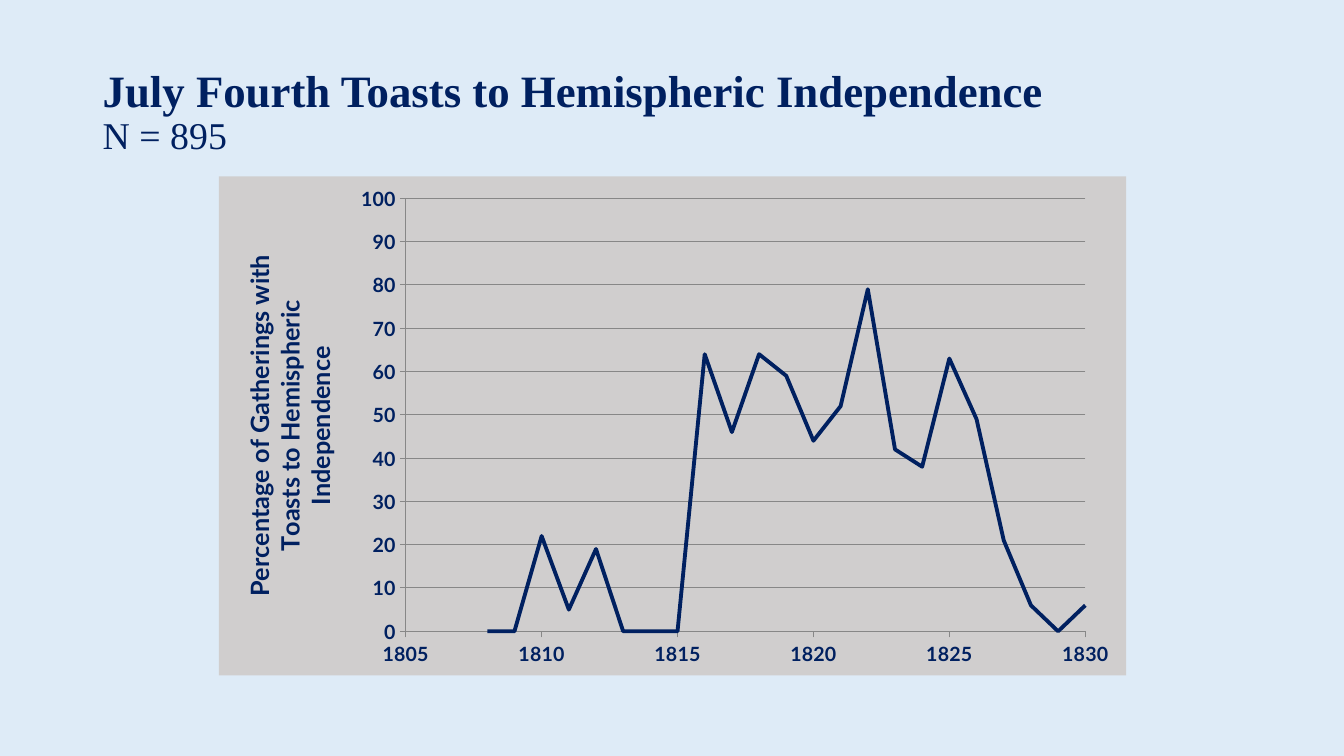
from dataclasses import dataclass

from lxml import etree
from pptx import Presentation
from pptx.chart.data import XyChartData
from pptx.dml.color import RGBColor
from pptx.enum import chart as charts, text
from pptx.oxml import parse_xml
from pptx.oxml.ns import nsdecls
from pptx.util import Inches, Pt


@dataclass(frozen=True)
class Theme:
    background: str = "DEEBF7"
    panel: str = "D0CECE"
    navy: str = "002060"
    grid: str = "878787"
    title_font: str = "Times New Roman"
    chart_font: str = "Lato"
    title_size: int = 32
    sample_size: int = 27
    axis_title_size: int = 18
    tick_size: int = 14
    base_size: int = 10


theme = Theme()


def style_font(font, name, size, bold):
    font.name = name
    font.size = Pt(size)
    font.bold = bold
    font.color.rgb = RGBColor.from_string(theme.navy)


def panel_fill():
    return parse_xml(
        f'<c:spPr {nsdecls("c", "a")}><a:solidFill><a:srgbClr val="{theme.panel}"/>'
        "</a:solidFill><a:ln><a:noFill/></a:ln></c:spPr>"
    )


presentation = Presentation()
presentation.slide_width = Inches(13.33)
presentation.slide_height = Inches(7.5)
slide = presentation.slides.add_slide(presentation.slide_layouts[6])
slide.background.fill.solid()
slide.background.fill.fore_color.rgb = RGBColor.from_string(theme.background)

title_box = slide.shapes.add_textbox(Inches(0.92), Inches(0.4), Inches(11.5), Inches(1.45))
title_frame = title_box.text_frame
title_frame.word_wrap = True
title_frame.vertical_anchor = text.MSO_ANCHOR.MIDDLE
paragraph = title_frame.paragraphs[0]
paragraph.line_spacing = 0.9
heading = paragraph.add_run()
heading.text = "July Fourth Toasts to Hemispheric Independence"
style_font(heading.font, theme.title_font, theme.title_size, True)
paragraph.add_line_break()
sample = paragraph.add_run()
sample.text = "N = 895"
style_font(sample.font, theme.title_font, theme.sample_size, False)

percentages = [0, 0, 22, 5, 19, 0, 0, 0, 64, 46, 64, 59,
               44, 52, 79, 42, 38, 63, 49, 21, 6, 0, 6]
chart_data = XyChartData()
toasts = chart_data.add_series("Series 1")
for year, percentage in enumerate(percentages, start=1808):
    toasts.add_data_point(year, percentage)

chart = slide.shapes.add_chart(
    charts.XL_CHART_TYPE.XY_SCATTER_SMOOTH_NO_MARKERS,
    Inches(2.17), Inches(1.75), Inches(9), Inches(4.95), chart_data,
).chart
chart.has_title = False
chart.has_legend = False
style_font(chart.font, theme.chart_font, theme.base_size, False)
chart.plots[0].vary_by_categories = False

series = chart.plots[0].series[0]
series.smooth = True
series.marker.style = charts.XL_MARKER_STYLE.NONE
series.format.line.color.rgb = RGBColor.from_string(theme.navy)
series.format.line.width = Pt(2.75)

year_axis, percent_axis = chart.category_axis, chart.value_axis
for axis, low, high, step in ((year_axis, 1805, 1830, 5), (percent_axis, 0, 100, 10)):
    axis.minimum_scale, axis.maximum_scale, axis.major_unit = low, high, step
    axis.major_tick_mark = charts.XL_TICK_MARK.OUTSIDE
    axis.minor_tick_mark = charts.XL_TICK_MARK.NONE
    axis.tick_labels.number_format = "General"
    axis.tick_labels.number_format_is_linked = False
    axis.format.line.color.rgb = RGBColor.from_string(theme.grid)
    axis.format.line.width = Pt(0.75)
    style_font(axis.tick_labels.font, theme.chart_font, theme.tick_size, True)

year_axis.has_major_gridlines = False
percent_axis.has_major_gridlines = True
gridline = percent_axis.major_gridlines.format.line
gridline.color.rgb = RGBColor.from_string(theme.grid)
gridline.width = Pt(0.75)

axis_frame = percent_axis.axis_title.text_frame
axis_frame.text = "Percentage of Gatherings with Toasts to Hemispheric Independence"
style_font(axis_frame.paragraphs[0].font, theme.chart_font, theme.axis_title_size, True)
axis_body = axis_frame._txBody.bodyPr
axis_body.set("rot", "-5400000")
axis_body.set("vert", "horz")

chart_space = chart._chartSpace
chart_space.chart.addnext(panel_fill())
plot_area = chart_space.chart.plotArea
plot_area.append(panel_fill())

for old_layout in plot_area.xpath("./c:layout"):
    plot_area.remove(old_layout)
layout = parse_xml(f'<c:layout {nsdecls("c")}><c:manualLayout/></c:layout>')
for tag, value in (("layoutTarget", "inner"), ("xMode", "edge"), ("yMode", "edge"),
                   ("x", "0.206"), ("y", "0.044"), ("w", "0.749"), ("h", "0.868")):
    etree.SubElement(layout[0], f"{{{layout.nsmap['c']}}}{tag}").set("val", value)
plot_area.insert(0, layout)

presentation.save("out.pptx")
